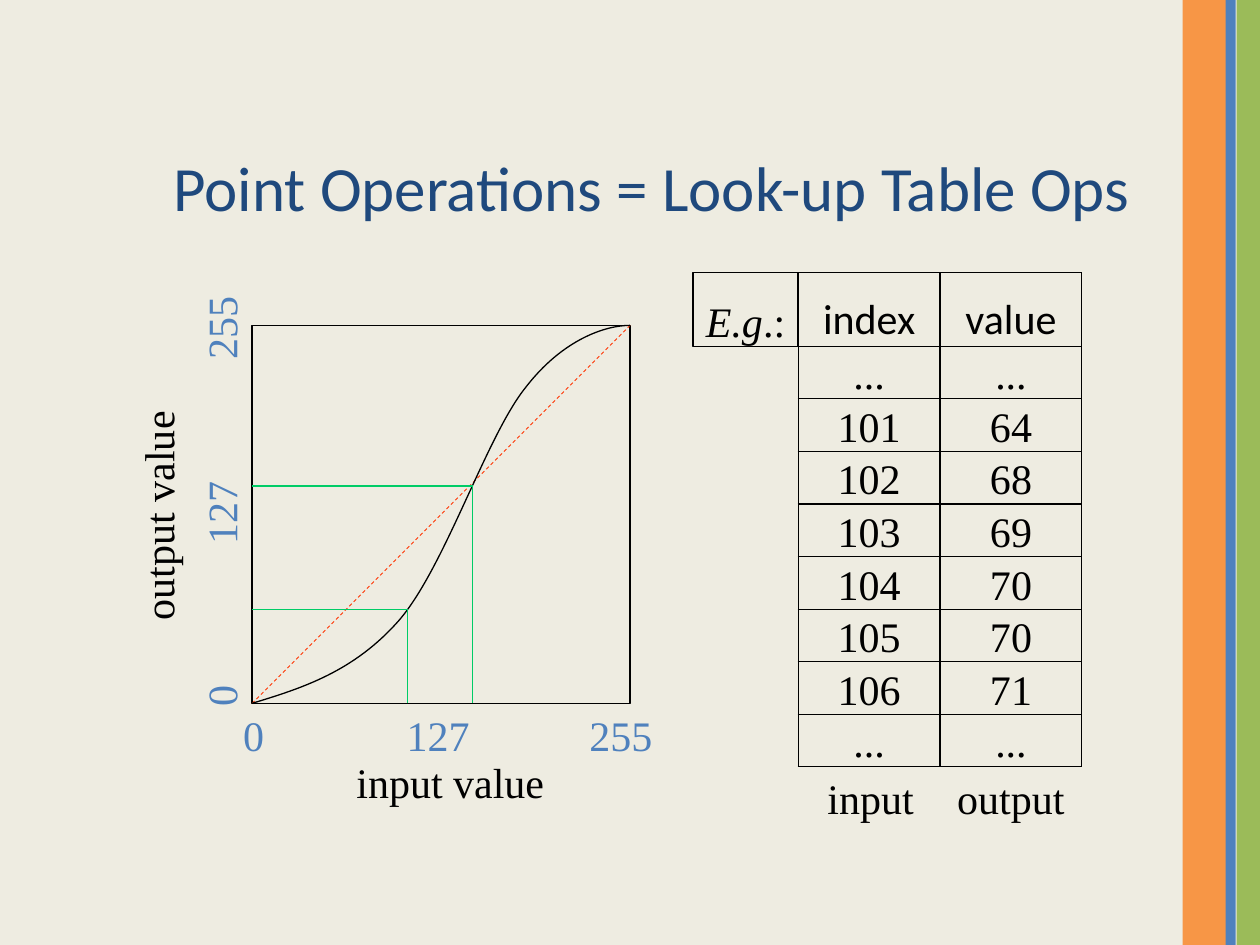
from lxml import etree
from pptx import Presentation
from pptx.dml.color import RGBColor
from pptx.enum.dml import MSO_LINE
from pptx.enum.shapes import MSO_CONNECTOR, MSO_SHAPE
from pptx.enum.text import MSO_ANCHOR, MSO_AUTO_SIZE, PP_ALIGN
from pptx.oxml.ns import qn
from pptx.util import Cm, Pt

LEFT, CENTER = PP_ALIGN.LEFT, PP_ALIGN.CENTER
MIDDLE, BOTTOM = MSO_ANCHOR.MIDDLE, MSO_ANCHOR.BOTTOM
FIT, FIXED = MSO_AUTO_SIZE.SHAPE_TO_FIT_TEXT, MSO_AUTO_SIZE.NONE
RECT, LINE, DASH = MSO_SHAPE.RECTANGLE, MSO_CONNECTOR.STRAIGHT, MSO_LINE.DASH

THEME = {
    "back": "EEECE1", "title": "1F497D", "ink": "000000", "scale": "4F81BD",
    "orange": "F79646", "blue": "4F81BD", "green": "9BBB59",
    "guide": "00CC66", "even": "FF3300",
    "sans": "Calibri", "serif": "Times New Roman",
    "head": 36, "body": 24, "thin": 0.5, "rule": 0.75,
}

# Content, lengths in cm
TITLE = "Point Operations = Look-up Table Ops"
BARS = [("orange", 23.84, 0.89), ("blue", 24.71, 0.2), ("green", 24.93, 0.47)]
# text, colour, centre x, centre y, width, turn
LABELS = [
    ("0", "scale", 5.12, 14.81, 0.94, 0),
    ("127", "scale", 8.84, 14.81, 1.78, 0),
    ("255", "scale", 12.52, 14.81, 1.78, 0),
    ("0", "scale", 4.45, 14.02, 0.94, 270),
    ("127", "scale", 4.45, 10.34, 1.78, 270),
    ("255", "scale", 4.45, 6.6, 1.78, 270),
    ("input value", "ink", 9.08, 15.77, 4.29, 0),
    ("output value", "ink", 3.18, 10.39, 4.72, 270),
    ("input", "ink", 17.56, 16.08, 2.26, 0),
    ("output", "ink", 20.38, 16.08, 2.67, 0),
]
PLOT = {"x": 5.08, "y": 6.56, "side": 7.62}
CURVE = [(5.08, 14.18), (6.1, 13.87), (7.14, 13.54), (8.05, 12.5),
         (8.97, 11.43), (9.8, 8.81), (10.59, 7.82),
         (11.35, 6.83), (12.22, 6.56), (12.7, 6.56)]
GUIDES = [(8.21, 12.28), (9.53, 9.8)]
ROWS = [("index", "value"), ("...", "..."), ("101", "64"), ("102", "68"),
        ("103", "69"), ("104", "70"), ("105", "70"), ("106", "71"),
        ("...", "...")]
GRID = {"x": 16.09, "y": 5.5, "cols": (2.86, 2.86), "head": 1.48, "row": 1.06}
EXAMPLE = [("E.g", True), (".:", False)]


def tint(name):
    return RGBColor.from_string(THEME[name])


def write(frame, text, font="serif", size="body", color="ink",
          align=LEFT, anchor=None, wrap=False, fit=FIXED):
    """Text is a string or a list of (string, italic) pairs."""
    frame.word_wrap = wrap
    frame.auto_size = fit
    if anchor is not None:
        frame.vertical_anchor = anchor
    par = frame.paragraphs[0]
    par.alignment = align
    for part, slant in [(text, None)] if isinstance(text, str) else text:
        run = par.add_run()
        run.text = part
        run.font.name = THEME[font]
        run.font.size = Pt(THEME[size])
        run.font.color.rgb = tint(color)
        run.font.italic = slant


def rect(x, y, w, h, fill=None):
    box = slide.shapes.add_shape(RECT, Cm(x), Cm(y), Cm(w), Cm(h))
    box.shadow.inherit = False
    if fill:
        box.fill.solid()
        box.fill.fore_color.rgb = tint(fill)
        box.line.fill.background()
    else:
        box.fill.background()
        stroke(box.line)
    return box


def stroke(line, color="ink", width="rule"):
    line.color.rgb = tint(color)
    line.width = Pt(THEME[width])


def link(x1, y1, x2, y2, color, width="rule"):
    line = slide.shapes.add_connector(LINE, Cm(x1), Cm(y1), Cm(x2), Cm(y2))
    etree.SubElement(line._element.spPr, qn("a:effectLst"))
    stroke(line.line, color, width)
    # The effect list must follow the line element
    line._element.spPr.append(line._element.spPr.find(qn("a:effectLst")))
    return line


def bend(shape):
    """Turn each three straight steps of an outline into one cubic curve."""
    track = next(shape._element.iter(qn("a:path")))
    steps = track.findall(qn("a:lnTo"))
    for i in range(0, len(steps), 3):
        cubic = etree.SubElement(track, qn("a:cubicBezTo"))
        for step in steps[i:i + 3]:
            cubic.append(step[0])
            track.remove(step)


def edge(cell):
    """Draw all four borders of a cell."""
    props = cell._tc.get_or_add_tcPr()
    for i, side in enumerate(("lnL", "lnR", "lnT", "lnB")):
        line = etree.Element(qn("a:" + side), w=str(Pt(THEME["rule"])))
        fill = etree.SubElement(line, qn("a:solidFill"))
        etree.SubElement(fill, qn("a:srgbClr"), val=THEME["ink"])
        props.insert(i, line)


deck = Presentation()
deck.slide_width, deck.slide_height = Cm(25.4), Cm(19.05)
slide = deck.slides.add_slide(deck.slide_layouts[5])
slide.background.fill.solid()
slide.background.fill.fore_color.rgb = tint("back")

# Side bars
for name, x, w in BARS:
    rect(x, 0, w, 19.05, name)

# Title
head = slide.shapes.title
head.left, head.top, head.width, head.height = Cm(2.34), Cm(2.87), Cm(21.59), Cm(1.78)
write(head.text_frame, TITLE, font="sans", size="head", color="title",
      align=CENTER, anchor=MIDDLE, wrap=True)

# Plot frame, diagonal and curve
left, top, side = PLOT["x"], PLOT["y"], PLOT["side"]
base = top + side
rect(left, top, side, side)
link(left, base, left + side, top, "even", "thin").line.dash_style = DASH
points = [(Cm(x), Cm(y)) for x, y in CURVE]
pen = slide.shapes.build_freeform(*points[0])
pen.add_line_segments(points[1:], close=False)
curve = pen.convert_to_shape()
curve.shadow.inherit = False
curve.fill.background()
stroke(curve.line)
bend(curve)

# Guides from the curve to both axes
for x, y in GUIDES:
    link(x, base, x, y, "guide")
    link(x, y, left, y, "guide")

# Labels
tall = 1.27
for text, color, x, y, w, turn in LABELS:
    box = slide.shapes.add_textbox(Cm(x - w / 2), Cm(y - tall / 2), Cm(w), Cm(tall))
    box.rotation = turn
    write(box.text_frame, text, color=color, fit=FIT)

# Look-up table
sizes = [GRID["head"]] + [GRID["row"]] * (len(ROWS) - 1)
table = slide.shapes.add_table(
    len(ROWS), len(GRID["cols"]), Cm(GRID["x"]), Cm(GRID["y"]),
    Cm(sum(GRID["cols"])), Cm(sum(sizes))).table
table.first_row = table.horz_banding = False
for col, w in zip(table.columns, GRID["cols"]):
    col.width = Cm(w)
for r, (row, h) in enumerate(zip(ROWS, sizes)):
    table.rows[r].height = Cm(h)
    for c, text in enumerate(row):
        cell = table.cell(r, c)
        cell.margin_left = cell.margin_right = 0
        cell.margin_top = cell.margin_bottom = 0
        cell.fill.background()
        cell.vertical_anchor = BOTTOM
        edge(cell)
        write(cell.text_frame, text, font="serif" if r else "sans",
              align=CENTER, wrap=True)

# Example tag beside the header row
tag = rect(GRID["x"] - 2.12, GRID["y"], 2.12, GRID["head"])
tag.text_frame.margin_bottom = 0
write(tag.text_frame, EXAMPLE, align=CENTER, anchor=BOTTOM)

deck.save("out.pptx")
